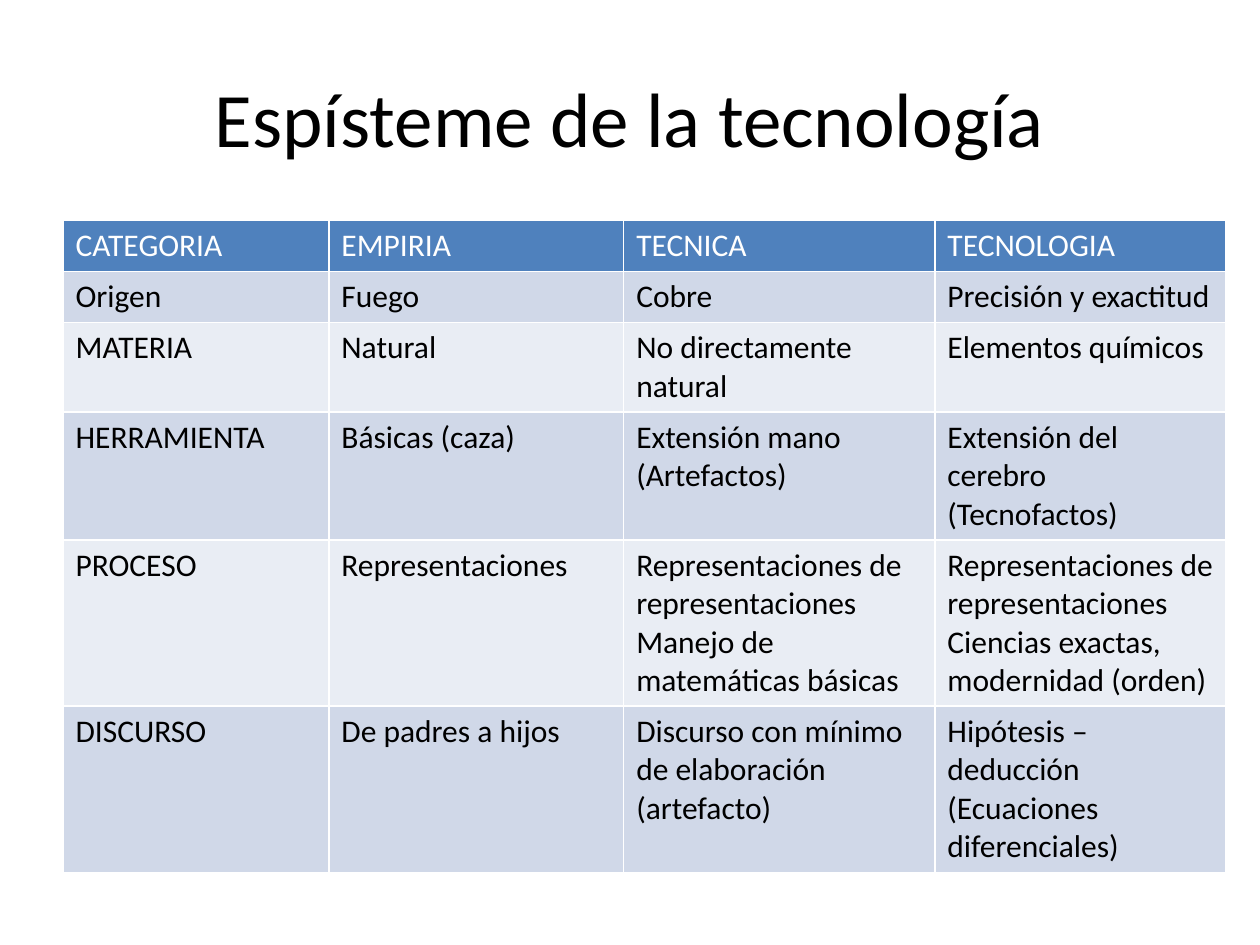
from dataclasses import dataclass

from lxml import etree
from pptx import Presentation
from pptx.dml.color import RGBColor
from pptx.enum.text import MSO_ANCHOR, PP_ALIGN
from pptx.oxml.ns import qn
from pptx.util import Inches, Pt

MIDDLE = MSO_ANCHOR.MIDDLE
LEFT, CENTER = PP_ALIGN.LEFT, PP_ALIGN.CENTER


@dataclass(frozen=True)
class Theme:
    font: str = "Calibri"
    title_size: int = 44
    table_size: int = 18
    ink: str = "000000"
    header_ink: str = "FFFFFF"
    header_fill: str = "4F81BD"
    bands: tuple = ("D0D8E8", "E9EDF4")
    grid: str = "FFFFFF"
    grid_width: int = 1


THEME = Theme()

TITLE = "Espísteme de la tecnología"
COLUMN_WIDTHS = (2.11, 2.34, 2.47, 2.31)
# Text lines that each row has room for
ROW_LINES = (1, 1, 2, 3, 4, 4)
LINE_HEIGHT, ROW_PADDING = 0.305, 0.1
# A line break inside a cell starts a new paragraph
ROWS = (
    ("CATEGORIA", "EMPIRIA", "TECNICA", "TECNOLOGIA"),
    ("Origen", "Fuego", "Cobre", "Precisión y exactitud"),
    ("MATERIA", "Natural", "No directamente natural", "Elementos químicos"),
    ("HERRAMIENTA", "Básicas (caza)", "Extensión mano (Artefactos)",
     "Extensión del cerebro (Tecnofactos)"),
    ("PROCESO", "Representaciones",
     "Representaciones de representaciones\nManejo de matemáticas básicas",
     "Representaciones de representaciones\nCiencias exactas, modernidad (orden)"),
    ("DISCURSO", "De padres a hijos",
     "Discurso con mínimo de elaboración (artefacto)",
     "Hipótesis – deducción (Ecuaciones diferenciales)"),
)


def write_text(frame, text, size, color, align=LEFT):
    frame.text = text
    font_format = {"name": THEME.font, "size": Pt(size), "bold": False}
    for paragraph in frame.paragraphs:
        paragraph.alignment = align
        for run in paragraph.runs:
            for attribute, value in font_format.items():
                setattr(run.font, attribute, value)
            run.font.color.rgb = RGBColor.from_string(color)


def add_borders(cell):
    properties = cell._tc.get_or_add_tcPr()
    for position, side in enumerate(("a:lnL", "a:lnR", "a:lnT", "a:lnB")):
        line = etree.Element(qn(side), w=str(Pt(THEME.grid_width)))
        fill = etree.SubElement(line, qn("a:solidFill"))
        etree.SubElement(fill, qn("a:srgbClr"), val=THEME.grid)
        properties.insert(position, line)


def add_title(slide, left, top, width, height):
    title = slide.shapes.add_textbox(
        Inches(left), Inches(top), Inches(width), Inches(height))
    title.text_frame.word_wrap = True
    title.text_frame.vertical_anchor = MIDDLE
    write_text(title.text_frame, TITLE, THEME.title_size, THEME.ink, CENTER)


def add_comparison(slide, left, top):
    heights = [ROW_PADDING + LINE_HEIGHT * lines for lines in ROW_LINES]
    table = slide.shapes.add_table(
        len(ROWS), len(COLUMN_WIDTHS), Inches(left), Inches(top),
        Inches(sum(COLUMN_WIDTHS)), Inches(sum(heights))).table
    for column, width in zip(table.columns, COLUMN_WIDTHS):
        column.width = Inches(width)

    for index, (row, height, texts) in enumerate(zip(table.rows, heights, ROWS)):
        row.height = Inches(height)
        if index == 0:
            fill, ink = THEME.header_fill, THEME.header_ink
        else:
            fill, ink = THEME.bands[(index - 1) % 2], THEME.ink
        for cell, text in zip(row.cells, texts):
            write_text(cell.text_frame, text, THEME.table_size, ink)
            cell.fill.solid()
            cell.fill.fore_color.rgb = RGBColor.from_string(fill)
            add_borders(cell)


def main():
    deck = Presentation()
    deck.slide_width, deck.slide_height = Inches(10), Inches(7.5)
    slide = deck.slides.add_slide(deck.slide_layouts[6])
    # Heading
    add_title(slide, 0.5, 0.3, 9, 1.25)
    # Categories compared across the three stages
    add_comparison(slide, 0.5, 1.75)
    deck.save("out.pptx")


if __name__ == "__main__":
    main()
